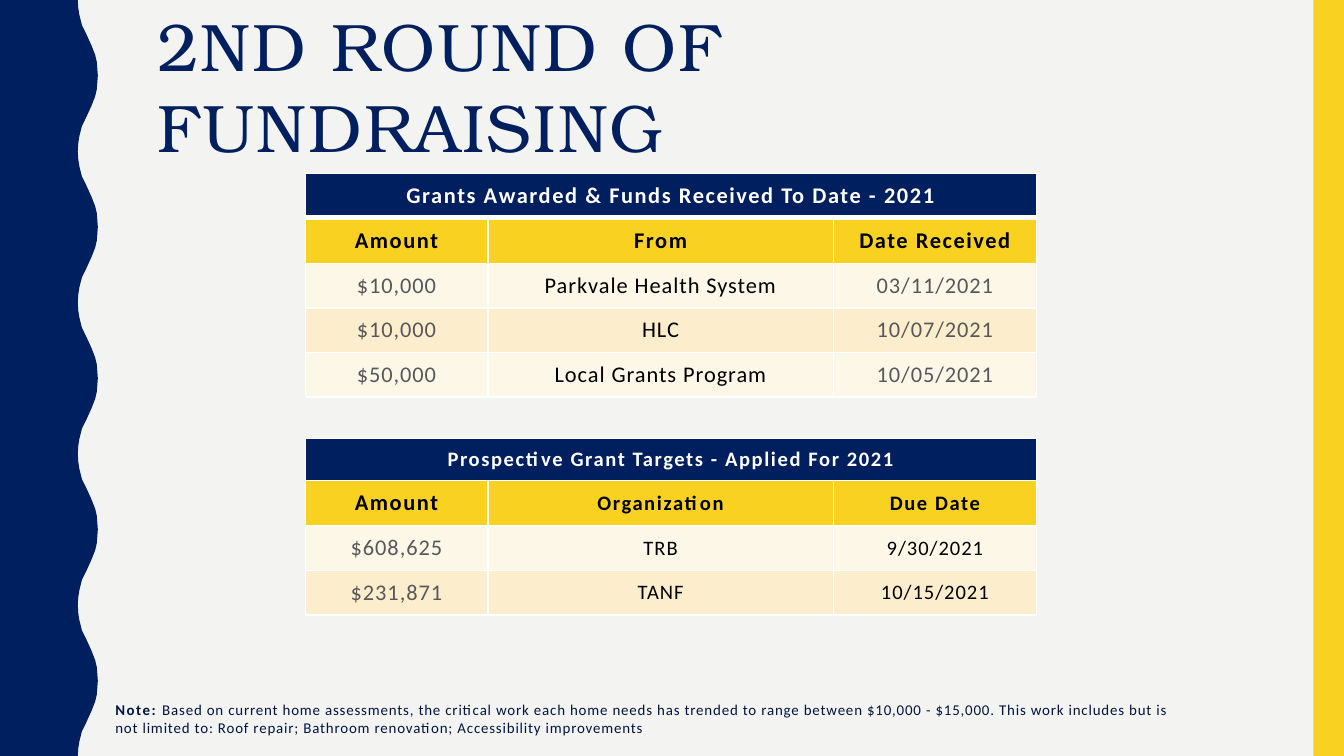
import pptx
import pptx.dml.color
import pptx.enum.shapes
import pptx.enum.text
import pptx.util
from lxml import etree
from pptx.oxml.ns import qn

Cm = pptx.util.Cm
Pt = pptx.util.Pt
RGB = pptx.dml.color.RGBColor.from_string
ALIGN = pptx.enum.text.PP_ALIGN
ANCHOR = pptx.enum.text.MSO_ANCHOR

theme = {
    "paper": "F3F3F1", "navy": "001F5F", "note": "001641", "yellow": "F9D121",
    "cream": "FDF7E8", "peach": "FCEDCC", "white": "FFFFFF",
    "black": "000000", "grey": "57585B",
    "heading font": "TeX Gyre Bonum", "text font": "Calibri",
    "heading size": 36, "table size": 12, "small table size": 11, "note size": 8,
}


def write(paragraph, text, font, size, color, spacing, bold=False):
    """Add a letter-spaced run; the font is set for the whole paragraph."""
    run = paragraph.add_run()
    run.text = text
    run._r.get_or_add_rPr().set("spc", str(round(spacing * 100)))
    paragraph.font.name = theme[font]
    paragraph.font.size = Pt(theme[size])
    paragraph.font.color.rgb = RGB(theme[color])
    run.font.bold = bold


def border(cell, side, color, width):
    """Add one cell edge; edges are added in the order L, R, T, B."""
    edge = etree.SubElement(cell._tc.get_or_add_tcPr(), qn("a:ln" + side), w=str(Pt(width)))
    fill = etree.SubElement(edge, qn("a:solidFill"))
    etree.SubElement(fill, qn("a:srgbClr"), val=theme[color])


deck = pptx.Presentation()
deck.slide_width, deck.slide_height = Cm(25.4), Cm(14.29)
slide = deck.slides.add_slide(deck.slide_layouts[5])
slide.background.fill.solid()
slide.background.fill.fore_color.rgb = RGB(theme["paper"])

# Wavy band on the left: five waves, each symmetric about its crest
period = 2.86
rise = [(1.47, 0), (1.48, 0.15), (1.5, 0.28), (1.55, 0.48), (1.63, 0.64),
        (1.73, 0.86), (1.8, 1.04), (1.83, 1.17), (1.85, 1.43)]
wave = rise + [(x, period - y) for x, y in reversed(rise[:-1])]
edge_points = [(Cm(x), min(Cm(y + n * period), deck.slide_height))
               for n in range(5) for x, y in wave]
outline = slide.shapes.build_freeform(0, 0)
outline.add_line_segments(edge_points + [(0, deck.slide_height)], close=True)
wavy_band = outline.convert_to_shape()

# Straight band on the right
right_band = slide.shapes.add_shape(pptx.enum.shapes.MSO_SHAPE.RECTANGLE,
                                    Cm(24.82), 0, Cm(0.58), deck.slide_height)
for band, color in ((wavy_band, "navy"), (right_band, "yellow")):
    band.shadow.inherit = False
    band.fill.solid()
    band.fill.fore_color.rgb = RGB(theme[color])
    band.line.fill.background()

# Title and footnote
title = slide.shapes.title
title.left, title.top, title.width, title.height = Cm(2.97), Cm(0.05), Cm(19.38), Cm(1.6)
note = slide.shapes.add_textbox(Cm(2.18), Cm(13.21), Cm(20.17), Cm(0.76))
for box in (title, note):
    frame = box.text_frame
    frame.word_wrap = True
    frame.auto_size = pptx.enum.text.MSO_AUTO_SIZE.SHAPE_TO_FIT_TEXT
    frame.vertical_anchor = ANCHOR.TOP
    frame.margin_left = frame.margin_right = frame.margin_bottom = 0
    frame.margin_top = Cm(0.03)
    frame.paragraphs[0].alignment = ALIGN.LEFT
write(title.text_frame.paragraphs[0], "2ND ROUND OF FUNDRAISING",
      "heading font", "heading size", "navy", 1.1)
note_line = note.text_frame.paragraphs[0]
note_line.line_spacing = 1.02
write(note_line, "Note: ", "text font", "note size", "note", 0.8, bold=True)
write(note_line, "Based on current home assessments, the critical work each home needs "
      "has trended to range between $10,000 - $15,000. This work includes but is not "
      "limited to: Roof repair; Bathroom renovation; Accessibility improvements",
      "text font", "note size", "note", 0.43)

# Grants table: fill, row height in cm, texts
rows = [
    ("navy", 0.84, ["Grants Awarded & Funds Received To Date - 2021"]),
    ("yellow", 0.86, ["Amount", "From", "Date Received"]),
    ("cream", 0.84, ["$10,000", "Parkvale Health System", "03/11/2021"]),
    ("peach", 0.84, ["$10,000", "HLC", "10/07/2021"]),
    ("cream", 0.84, ["$50,000", "Local Grants Program", "10/05/2021"]),
    ("paper", 0.79, []),
    ("navy", 0.79, ["Prospective Grant Targets - Applied For 2021"]),
    ("yellow", 0.86, ["Amount", "Organization", "Due Date"]),
    ("cream", 0.84, ["$608,625", "TRB", "9/30/2021"]),
    ("peach", 0.84, ["$231,871", "TANF", "10/15/2021"]),
]
gap_row = 5
widths = [3.45, 6.53, 3.84]
grants = slide.shapes.add_table(len(rows), len(widths), Cm(5.77), Cm(3.28),
                                Cm(sum(widths)), Cm(sum(row[1] for row in rows))).table
grants.first_row = grants.horz_banding = False
for column, width in zip(grants.columns, widths):
    column.width = Cm(width)

for r, (fill, height, texts) in enumerate(rows):
    grants.rows[r].height = Cm(height)
    if len(texts) < len(widths):
        grants.cell(r, 0).merge(grants.cell(r, len(widths) - 1))
    for c in range(len(widths)):
        cell = grants.cell(r, c)
        cell.margin_left = cell.margin_right = cell.margin_top = cell.margin_bottom = 0
        cell.vertical_anchor = ANCHOR.MIDDLE
        for side in "LRTB":
            thick = (r, side) in ((0, "B"), (1, "T"))
            hidden = r == gap_row and side in "LR"
            border(cell, side, "paper" if hidden else "white", 3 if thick else 1)
        cell.fill.solid()
        cell.fill.fore_color.rgb = RGB(theme[fill])
        if c >= len(texts):
            continue
        lower = r > gap_row
        heading = fill in ("navy", "yellow")
        if fill == "navy":
            color = "white"
        elif heading or c == 1 or (lower and c == 2):
            color = "black"
        else:
            color = "grey"
        small = lower and (c > 0 or fill == "navy")
        entry = cell.text_frame.paragraphs[0]
        entry.alignment = ALIGN.CENTER
        write(entry, texts[c], "text font", "small table size" if small else "table size",
              color, 0.85 if heading else 0.5, heading)

deck.save("out.pptx")
